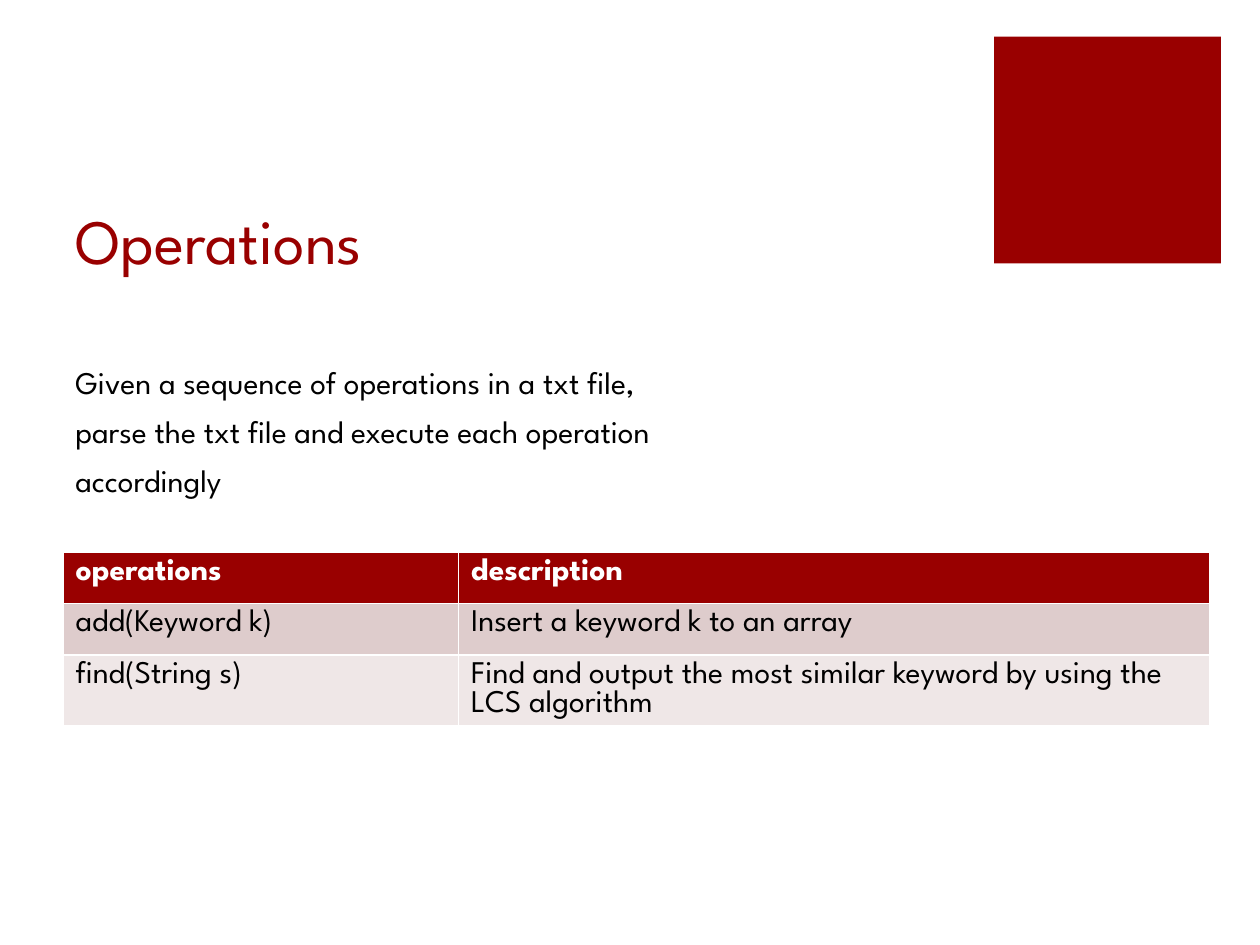
"""Build the Operations slide with its table of commands."""
from pptx import Presentation
from pptx import util as u
from pptx.dml.color import RGBColor
from pptx.enum import shapes, text

TITLE = "Operations"
INTRO = ("Given a sequence of operations in a txt file, parse the txt file "
         "and execute each operation accordingly")
ROWS = [
    ("operations", "description"),
    ("add(Keyword k)", "Insert a keyword k to an array"),
    ("find(String s)", "Find and output the most similar keyword by using the LCS algorithm"),
]
COL_WIDTHS = [3.14, 5.96]
ROW_HEIGHT = 0.41
LEFT = 0.5
FONT = "League Spartan"
COLORS = {"red": "990000", "white": "FFFFFF", "black": "000000",
          "dark_band": "DECCCC", "light_band": "EFE7E7"}
ROW_FILLS = ["red", "dark_band", "light_band"]


def rgb(name):
    return RGBColor.from_string(COLORS[name])


def box(*lengths):
    return [u.Inches(x) for x in lengths]


def add_run(p, words, size, color, bold=False):
    r = p.add_run()
    r.text = words
    r.font.name, r.font.size, r.font.bold = FONT, u.Pt(size), bold
    r.font.color.rgb = rgb(color)


def add_title(s):
    sp = s.shapes.title
    sp.left, sp.top, sp.width, sp.height = box(LEFT, 1, 7.12, 1.25)
    tf = sp.text_frame
    tf.auto_size = text.MSO_AUTO_SIZE.NONE
    tf.vertical_anchor = text.MSO_ANCHOR.BOTTOM
    p = tf.paragraphs[0]
    p.alignment = text.PP_ALIGN.LEFT
    add_run(p, TITLE, 36, "red")


def add_square(s):
    sp = s.shapes.add_shape(shapes.MSO_SHAPE.RECTANGLE, *box(7.89, 0.29, 1.8, 1.8))
    sp.shadow.inherit = False
    sp.fill.solid()
    sp.fill.fore_color.rgb = rgb("red")
    sp.line.fill.background()


def add_intro(s):
    tf = s.shapes.add_textbox(*box(LEFT, 2.74, 5, 1.01)).text_frame
    tf.word_wrap = True
    tf.auto_size = text.MSO_AUTO_SIZE.SHAPE_TO_FIT_TEXT
    p = tf.paragraphs[0]
    p.line_spacing = 1.3
    add_run(p, INTRO, 18, "black")


def add_operations(s):
    size = box(LEFT, 4.38, sum(COL_WIDTHS), ROW_HEIGHT * len(ROWS))
    table = s.shapes.add_table(len(ROWS), len(COL_WIDTHS), *size).table
    for col, width in zip(table.columns, COL_WIDTHS):
        col.width = u.Inches(width)
    for i, (row, fill) in enumerate(zip(ROWS, ROW_FILLS)):
        for j, words in enumerate(row):
            cell = table.cell(i, j)
            cell.fill.solid()
            cell.fill.fore_color.rgb = rgb(fill)
            add_run(cell.text_frame.paragraphs[0], words, 18,
                    "black" if i else "white", bold=i == 0)


def main():
    prs = Presentation()
    prs.slide_width, prs.slide_height = box(10, 7.5)
    s = prs.slides.add_slide(prs.slide_layouts[5])
    add_square(s)
    add_title(s)
    add_operations(s)
    add_intro(s)
    prs.save("out.pptx")


if __name__ == "__main__":
    main()
